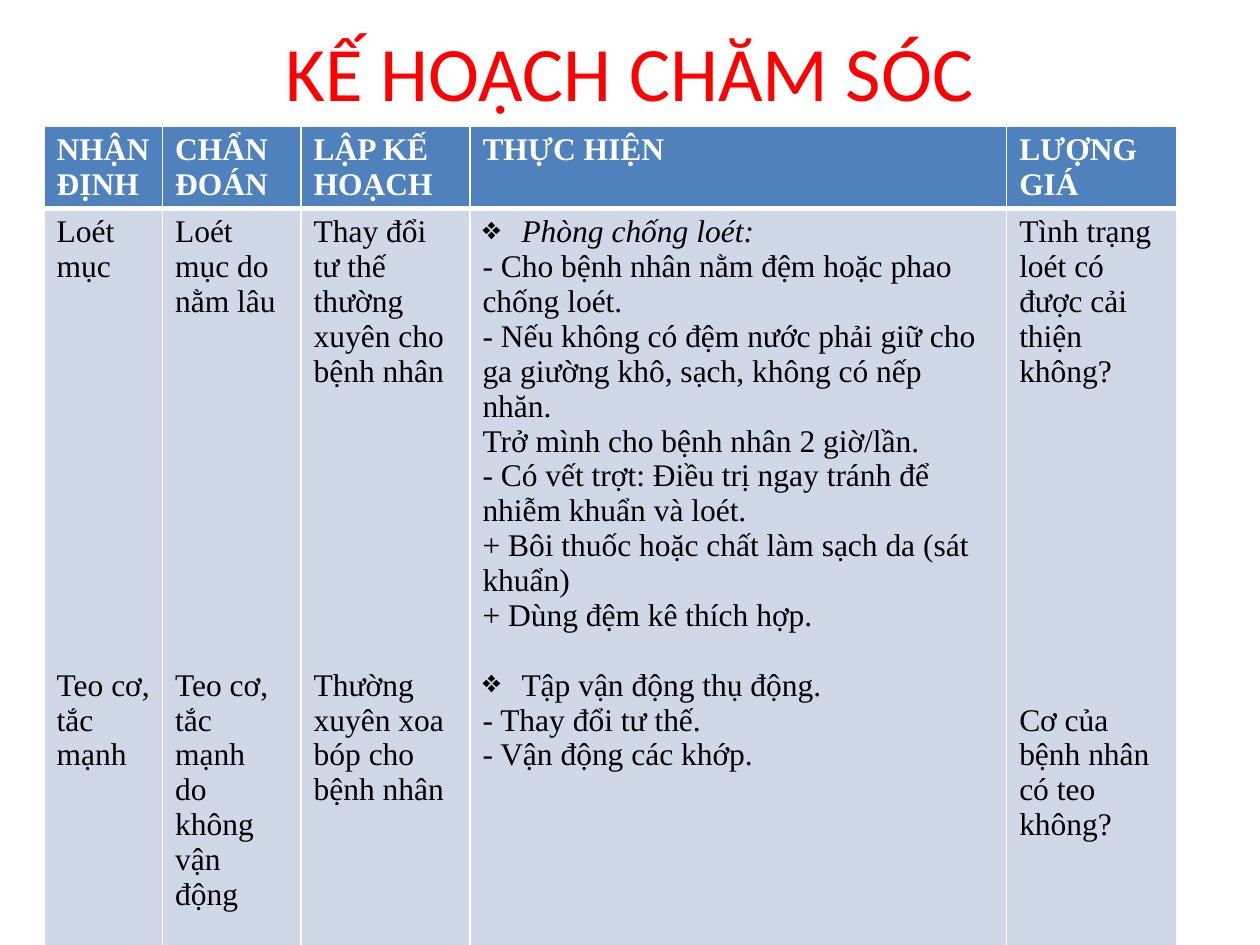
"""Build a nursing care plan slide with a title and a five-column table."""
from lxml import etree
from pptx import Presentation
from pptx.dml.color import RGBColor
from pptx.enum.text import MSO_ANCHOR, PP_ALIGN
from pptx.oxml.ns import qn
from pptx.util import Inches, Pt

MIDDLE, CENTER = MSO_ANCHOR.MIDDLE, PP_ALIGN.CENTER
COLORS = {"title": "FF0000", "head": "4F81BD", "body": "D0D8E8",
          "head_text": "FFFFFF", "body_text": "000000", "rule": "FFFFFF"}
TITLE = "KẾ HOẠCH CHĂM SÓC"
TITLE_FONT, TABLE_FONT = "Calibri", "Times New Roman"
SIZE, LINE, INDENT = 18, 19.93, 0.31
BULLET = "❖"
ROW_HEIGHTS = [0.65, 7.95]
RULE_SIDES = {"head": "a:lnB", "body": "a:lnT"}

COLUMNS = [
    ("NHẬN ĐỊNH", 0.94, 11, ["Loét mục"], ["Teo cơ, tắc mạnh"]),
    ("CHẨN ĐOÁN", 1.1, 10, ["Loét mục do nằm lâu"],
     ["Teo cơ, tắc mạnh", "do không vận động"]),
    ("LẬP KẾ HOẠCH", 1.34, 8, ["Thay đổi tư thế thường xuyên cho bệnh nhân"],
     ["Thường xuyên xoa bóp cho bệnh nhân"]),
    ("THỰC HIỆN", 4.26, 1,
     [("Phòng chống loét:", True),
      "- Cho bệnh nhân nằm đệm hoặc phao chống loét.",
      "- Nếu không có đệm nước phải giữ cho ga giường khô, sạch, không có nếp",
      "nhăn.",
      "Trở mình cho bệnh nhân 2 giờ/lần.",
      "- Có vết trợt: Điều trị ngay tránh để nhiễm khuẩn và loét.",
      "+ Bôi thuốc hoặc chất làm sạch da (sát khuẩn)",
      "+ Dùng đệm kê thích hợp."],
     [("Tập vận động thụ động.", False),
      "- Thay đổi tư thế.",
      "- Vận động các khớp."]),
    ("LƯỢNG GIÁ", 1.35, 9, ["Tình trạng loét có được cải thiện không?"],
     ["Cơ của bệnh nhân có teo không?"]),
]


def add_run(p, text, font, size, color, bold=False, italic=False):
    r = p.add_run()
    r.text = text
    r.font.name, r.font.size = font, Pt(size)
    r.font.bold, r.font.italic = bold, italic
    r.font.color.rgb = RGBColor.from_string(COLORS[color])


def add_bullet(p):
    pPr = p._p.get_or_add_pPr()
    pPr.set("marL", str(Inches(INDENT)))
    pPr.set("indent", str(-Inches(INDENT)))
    etree.SubElement(pPr, qn("a:buChar")).set("char", BULLET)


def add_rule(cell, side):
    ln = etree.Element(qn(side), w=str(Pt(3)))
    fill = etree.SubElement(ln, qn("a:solidFill"))
    etree.SubElement(fill, qn("a:srgbClr")).set("val", COLORS["rule"])
    cell._tc.get_or_add_tcPr().insert(0, ln)


def fill_cell(cell, role, items, gaps=None):
    cell.fill.solid()
    cell.fill.fore_color.rgb = RGBColor.from_string(COLORS[role])
    add_rule(cell, RULE_SIDES[role])
    tf = cell.text_frame
    for i, item in enumerate(items):
        p = tf.add_paragraph() if i else tf.paragraphs[0]
        if gaps and i in gaps:
            p.space_before = Pt(gaps[i] * LINE)
        bulleted = isinstance(item, tuple)
        text, italic = item if bulleted else (item, False)
        if bulleted:
            add_bullet(p)
        add_run(p, text, TABLE_FONT, SIZE, role + "_text", role == "head", italic)


def main():
    prs = Presentation()
    prs.slide_width, prs.slide_height = Inches(10), Inches(7.5)
    s = prs.slides.add_slide(prs.slide_layouts[5])

    title = s.shapes.title
    title.left, title.top = Inches(0.5), Inches(0.13)
    title.width, title.height = Inches(9), Inches(0.87)
    tf = title.text_frame
    tf.vertical_anchor = MIDDLE
    p = tf.paragraphs[0]
    p.alignment = CENTER
    add_run(p, TITLE, TITLE_FONT, 44, "title")

    width = sum(col[1] for col in COLUMNS)
    table = s.shapes.add_table(2, len(COLUMNS), Inches(0.35), Inches(1),
                               Inches(width), Inches(sum(ROW_HEIGHTS))).table
    for row, height in zip(table.rows, ROW_HEIGHTS):
        row.height = Inches(height)
    for c, (heading, col_width, gap, first, second) in enumerate(COLUMNS):
        table.columns[c].width = Inches(col_width)
        fill_cell(table.cell(0, c), "head", [heading])
        fill_cell(table.cell(1, c), "body", first + second, {len(first): gap})

    prs.save("out.pptx")


if __name__ == "__main__":
    main()
